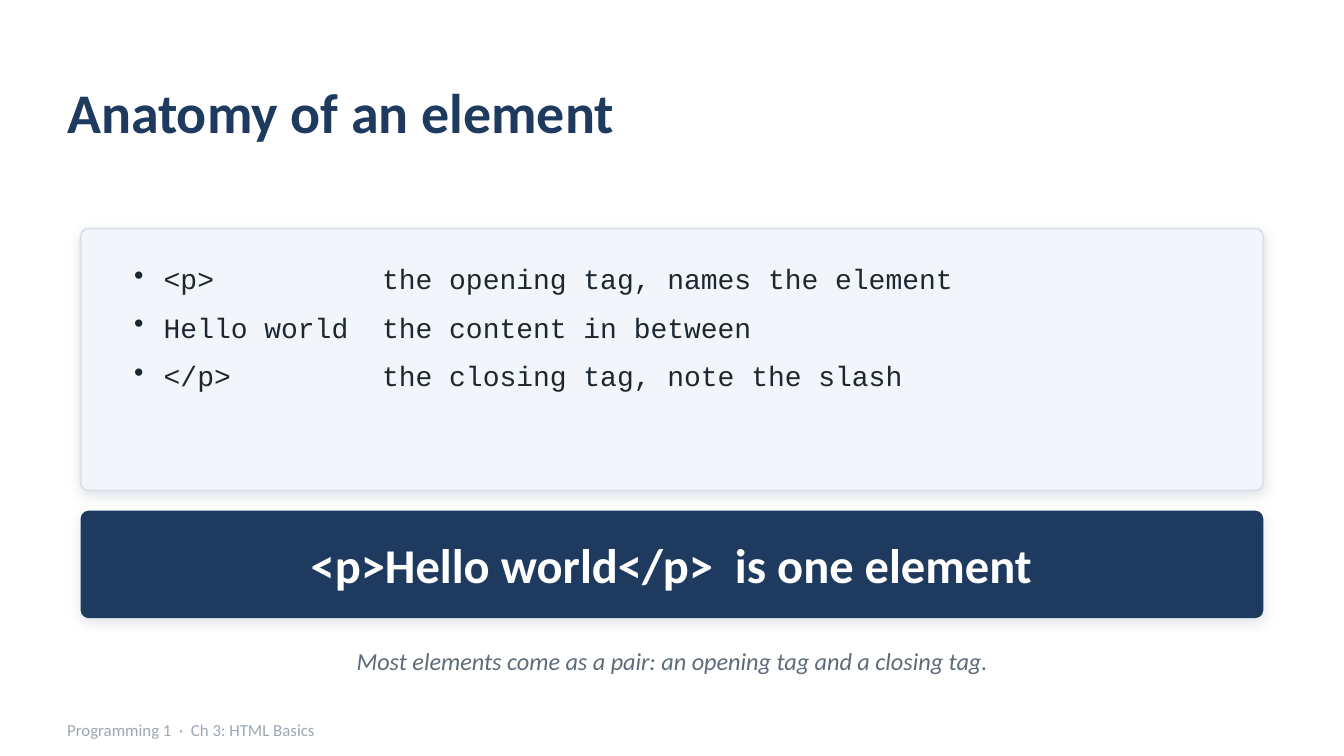
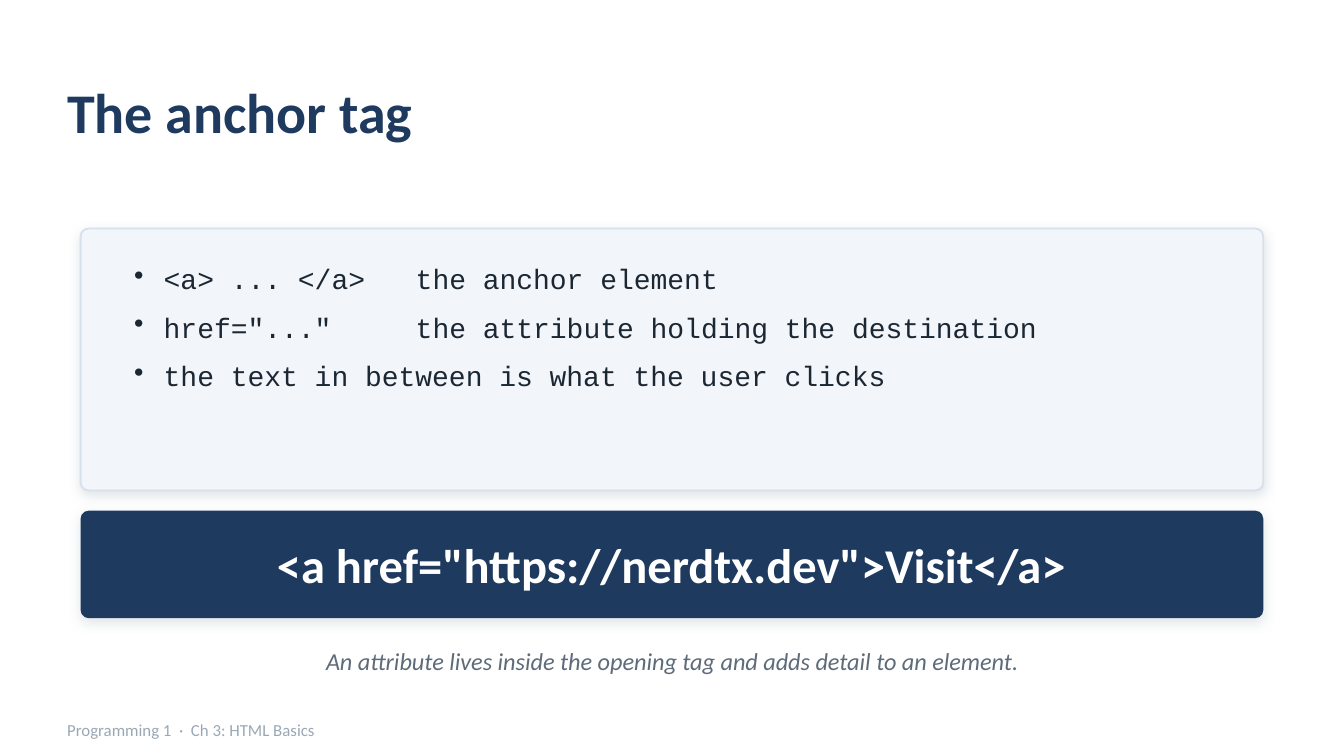
from pptx import Presentation
from pptx.util import Inches, Pt
from pptx.dml.color import RGBColor as Rgb
from pptx.enum.shapes import MSO_SHAPE as Kind
from pptx.enum.text import MSO_ANCHOR as Anchor, PP_ALIGN as Align
from lxml.etree import SubElement as Sub
from pptx.oxml.ns import qn

HUE = {"navy": "1F3A5F", "pale": "F2F5F9", "edge": "D8E0E9", "ink": "1B2733",
       "white": "FFFFFF", "note": "5E6B79", "gray": "9AA8B6"}
MID, LEFT = Align.CENTER, Align.LEFT
STYLE = {
    "title": {"name": "Calibri", "size": Pt(30), "bold": True, "hue": "navy", "align": LEFT},
    "code": {"name": "Courier New", "size": Pt(15), "hue": "ink", "align": LEFT},
    "band": {"name": "Calibri", "size": Pt(26), "bold": True, "hue": "white", "align": MID},
    "note": {"name": "Calibri", "size": Pt(13), "italic": True, "hue": "note", "align": MID},
    "foot": {"name": "Calibri", "size": Pt(9), "hue": "gray", "align": LEFT},
}
EDGE, WIDE = 0.6, 8.8
HANG, CHAR = 0.22, 1 / 8
FOOT = "Programming 1  ·  Ch 3: HTML Basics"

PAGES = [
    {"title": "Anatomy of an element",
     "terms": ["<p>", "Hello world", "</p>"],
     "means": ["the opening tag, names the element",
               "the content in between",
               "the closing tag, note the slash"],
     "chars": 13,
     "band": "<p>Hello world</p>  is one element",
     "note": "Most elements come as a pair: an opening tag and a closing tag."},
    {"title": "The anchor tag",
     "terms": ["<a> ... </a>", 'href="..."',
               "the text in between is what the user clicks"],
     "means": ["the anchor element", "the attribute holding the destination"],
     "chars": 15,
     "band": '<a href="https://nerdtx.dev">Visit</a>',
     "note": "An attribute lives inside the opening tag and adds detail to an element."},
]


def write(slide, place, lines, style, dots=False):
    frame = slide.shapes.add_textbox(*map(Inches, place)).text_frame
    frame.word_wrap = True
    code = style == "code"
    if not code:
        frame.vertical_anchor = Anchor.MIDDLE
        for side in ("left", "top", "right", "bottom"):
            setattr(frame, "margin_" + side, 0)
    for num, line in enumerate(lines):
        para = frame.add_paragraph() if num else frame.paragraphs[0]
        if code:
            para.space_after = Pt(8)
        if dots:
            props = para._p.get_or_add_pPr()
            props.set("marL", str(Inches(HANG)))
            props.set("indent", str(-Inches(HANG)))
            Sub(props, qn("a:buSzPct"), val="100000")
            Sub(props, qn("a:buChar"), char="•")
        para.alignment = STYLE[style]["align"]
        run = para.add_run()
        run.text = line
        for key, val in STYLE[style].items():
            if key == "hue":
                run.font.color.rgb = Rgb.from_string(HUE[val])
            elif key != "align":
                setattr(run.font, key, val)


def panel(slide, top, high, fill, edge=None):
    card = slide.shapes.add_shape(Kind.ROUNDED_RECTANGLE,
                                  *map(Inches, (EDGE, top, WIDE, high)))
    card.adjustments[0] = 0.06 / high
    card.fill.solid()
    card.fill.fore_color.rgb = Rgb.from_string(HUE[fill])
    if edge:
        card.line.color.rgb = Rgb.from_string(HUE[edge])
        card.line.width = Pt(1)
    else:
        card.line.fill.background()
    card.shadow.inherit = False
    glow = Sub(card._element.spPr.find(qn("a:effectLst")), qn("a:outerShdw"),
               blurRad=str(Pt(6)), dist=str(Pt(2)), dir="5400000",
               algn="bl", rotWithShape="0")
    tint = Sub(glow, qn("a:srgbClr"), val=HUE["gray"])
    Sub(tint, qn("a:alpha"), val="28000")


deck = Presentation()
deck.slide_width, deck.slide_height = Inches(10), Inches(10 * 9 / 16)

for page in PAGES:
    slide = deck.slides.add_slide(deck.slide_layouts[6])
    slide.background.fill.solid()
    slide.background.fill.fore_color.rgb = Rgb.from_string(HUE["white"])
    write(slide, (0.5, 0.4, 9, 0.85), [page["title"]], "title")
    panel(slide, 1.7, 1.95, "pale", "edge")
    write(slide, (0.9, 1.9, 8.2, 1.6), page["terms"], "code", dots=True)
    shift = HANG + page["chars"] * CHAR
    write(slide, (0.9 + shift, 1.9, 8.2 - shift, 1.6), page["means"], "code")
    panel(slide, 3.8, 0.8, "navy")
    write(slide, (EDGE, 3.83, WIDE, 0.74), [page["band"]], "band")
    write(slide, (EDGE, 4.72, WIDE, 0.4), [page["note"]], "note")
    write(slide, (0.5, 5.3, 8, 0.26), [FOOT], "foot")

deck.save("out.pptx")
